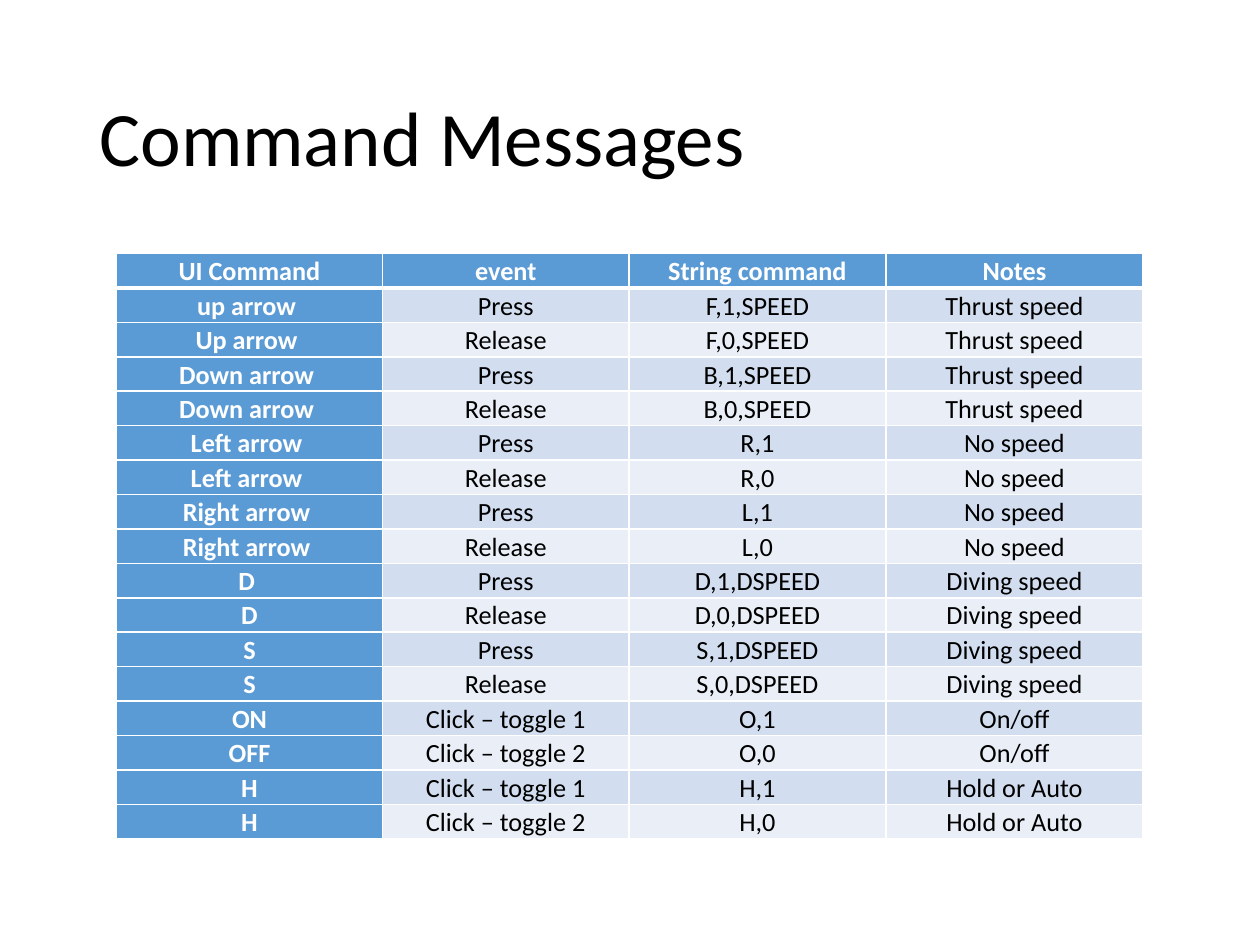
from lxml import etree
from pptx import Presentation
from pptx.dml.color import RGBColor
from pptx.enum.text import MSO_ANCHOR, PP_ALIGN
from pptx.oxml.ns import qn
from pptx.util import Cm, Pt

LEFT, CENTER = PP_ALIGN.LEFT, PP_ALIGN.CENTER
MIDDLE = MSO_ANCHOR.MIDDLE

# Content
TITLE = "Command Messages"
HEADINGS = ("UI Command", "event", "String command", "Notes")
COMMANDS = [
    ("up arrow ", "Press", "F,1,SPEED", "Thrust speed"),
    ("Up arrow ", "Release", "F,0,SPEED", "Thrust speed"),
    ("Down arrow ", "Press", "B,1,SPEED", "Thrust speed"),
    ("Down arrow ", "Release", "B,0,SPEED", "Thrust speed"),
    ("Left arrow ", "Press", "R,1", "No speed"),
    ("Left arrow ", "Release", "R,0", "No speed"),
    ("Right arrow ", "Press", "L,1", "No speed"),
    ("Right arrow ", "Release", "L,0", "No speed"),
    ("D ", "Press", "D,1,DSPEED", "Diving speed"),
    ("D", "Release", "D,0,DSPEED", "Diving speed"),
    ("S", "Press", "S,1,DSPEED", "Diving speed"),
    ("S", "Release", "S,0,DSPEED", "Diving speed"),
    ("ON", "Click – toggle 1", "O,1", "On/off"),
    ("OFF", "Click – toggle 2", "O,0", "On/off"),
    ("H", "Click – toggle 1", "H,1", "Hold or Auto"),
    ("H", "Click – toggle 2", "H,0", "Hold or Auto"),
]

# Style
FONT = "Calibri"
COLORS = {
    "heading": "5B9BD5",
    "odd_row": "D2DEEF",
    "even_row": "EAEFF7",
    "light": "FFFFFF",
    "dark": "000000",
}
COLUMN_WIDTHS = (5.36, 4.97, 5.18, 5.18)
ROW_HEIGHT = 0.65


def color(name):
    return RGBColor.from_string(COLORS[name])


def format_text(paragraph, size, color_name, align, spacing, bold=False):
    paragraph.alignment = align
    paragraph.line_spacing = spacing
    for run in paragraph.runs:
        run.font.name = FONT
        run.font.size = Pt(size)
        run.font.bold = bold
        run.font.color.rgb = color(color_name)


def add_borders(cell, widths):
    properties = cell._tc.get_or_add_tcPr()
    for side, width in widths.items():
        line = etree.SubElement(properties, qn(f"a:ln{side}"), w=str(Pt(width)))
        fill = etree.SubElement(line, qn("a:solidFill"))
        etree.SubElement(fill, qn("a:srgbClr"), val=COLORS["light"])


def fill_cell(cell, text, row, column):
    is_heading = row == 0 or column == 0
    cell.text_frame.text = text
    cell.margin_left = cell.margin_right = Cm(0.24)
    cell.margin_top = cell.margin_bottom = 0
    # The rule under the heading row is thicker
    add_borders(cell, {"L": 1, "R": 1, "T": 3 if row == 1 else 1,
                       "B": 3 if row == 0 else 1})
    band = "odd_row" if row % 2 else "even_row"
    cell.fill.solid()
    cell.fill.fore_color.rgb = color("heading" if is_heading else band)
    format_text(cell.text_frame.paragraphs[0], 15,
                "light" if is_heading else "dark", CENTER, 1.07, is_heading)


presentation = Presentation()
presentation.slide_width, presentation.slide_height = Cm(25.4), Cm(19.05)
slide = presentation.slides.add_slide(presentation.slide_layouts[5])

# Title
title = slide.shapes.title
title.left, title.top = Cm(1.75), Cm(1.01)
title.width, title.height = Cm(21.9), Cm(3.68)
title.text_frame.text = TITLE
title.text_frame.vertical_anchor = MIDDLE
format_text(title.text_frame.paragraphs[0], 44, "dark", LEFT, 0.9)

# Command table
rows = [HEADINGS, *COMMANDS]
command_table = slide.shapes.add_table(
    len(rows), len(HEADINGS), Cm(2.35), Cm(5.11),
    Cm(sum(COLUMN_WIDTHS)), Cm(ROW_HEIGHT * len(rows))).table
for column, width in zip(command_table.columns, COLUMN_WIDTHS):
    column.width = Cm(width)
for row_number, texts in enumerate(rows):
    command_table.rows[row_number].height = Cm(ROW_HEIGHT)
    for column_number, text in enumerate(texts):
        fill_cell(command_table.cell(row_number, column_number), text,
                  row_number, column_number)

presentation.save("out.pptx")
